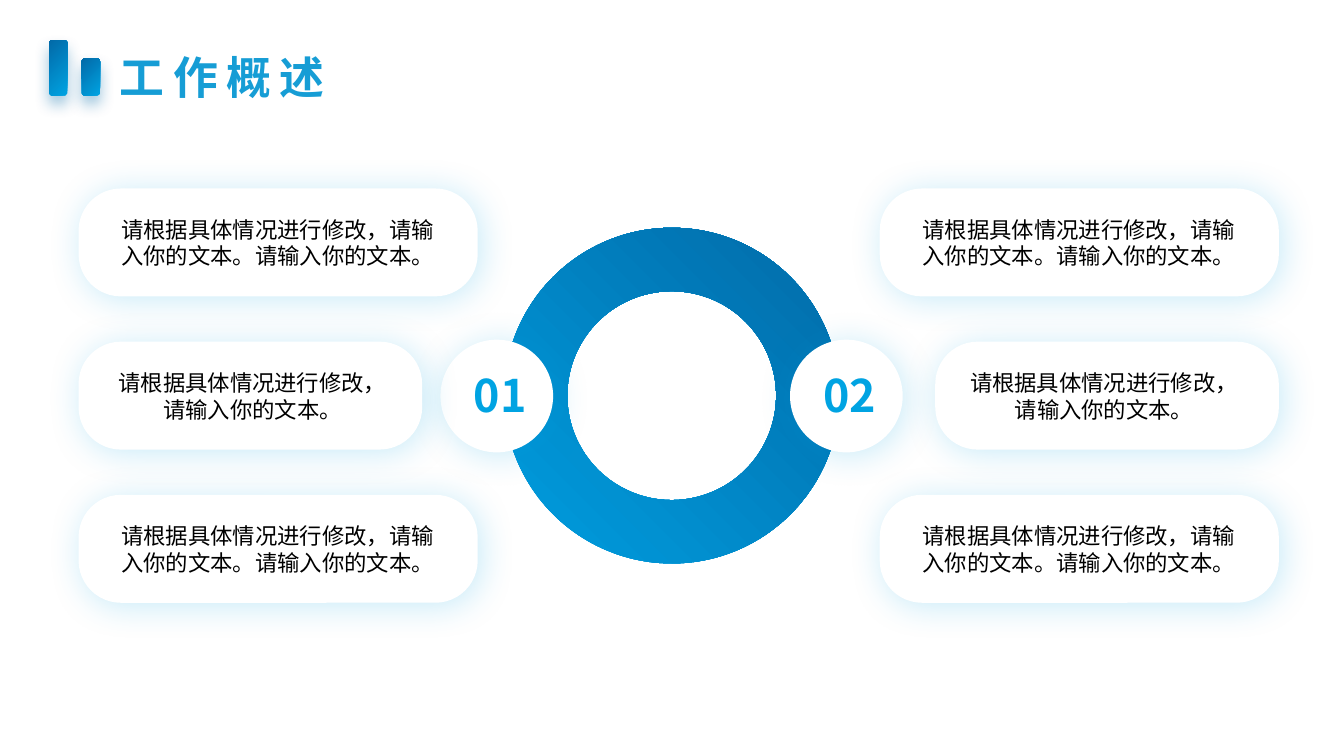
from lxml import etree
from pptx import Presentation
from pptx.dml.color import RGBColor
from pptx.enum.shapes import MSO_SHAPE
from pptx.enum.text import MSO_AUTO_SIZE, PP_ALIGN
from pptx.oxml.ns import qn
from pptx.util import Cm, Pt

DONUT = MSO_SHAPE.DONUT
OVAL = MSO_SHAPE.OVAL
ROUNDED = MSO_SHAPE.ROUNDED_RECTANGLE
FIT_SHAPE = MSO_AUTO_SIZE.SHAPE_TO_FIT_TEXT
LEFT, CENTER = PP_ALIGN.LEFT, PP_ALIGN.CENTER

FONT = "Noto Sans CJK SC"
BLUE, NAVY, WHITE = "00A3E2", "026AA8", "FFFFFF"
CARD_GLOW = (BLUE, 21, 26, 3, 45)
BAR_SHADOW = (NAVY, 40, 11, 6, 90)

SHORT_TEXT = "请根据具体情况进行修改，请输入你的文本。"
LONG_TEXT = SHORT_TEXT + "请输入你的文本。"
CARD_ROWS = [(LONG_TEXT, 10.06, 8.66), (SHORT_TEXT, 8.66, 7.39), (LONG_TEXT, 10.06, 8.66)]
CARD_TOP, CARD_PITCH, CARD_HEIGHT = 4.75, 3.86, 2.72


def rgb(color):
    return RGBColor.from_string(color)


def paint(fill, colors, angle=315):
    if len(colors) == 1:
        fill.solid()
        fill.fore_color.rgb = rgb(colors[0])
        return
    fill.gradient()
    fill.gradient_angle = angle
    for stop, color in zip(fill.gradient_stops, colors):
        stop.color.rgb = rgb(color)


def add_shadow(sp, color, alpha, blur, distance, angle):
    effects = sp._element.spPr.find(qn("a:effectLst"))
    shadow = etree.SubElement(
        effects, qn("a:outerShdw"), blurRad=str(Pt(blur)), dist=str(Pt(distance)),
        dir=str(angle * 60000), algn="ctr", rotWithShape="0")
    clr = etree.SubElement(shadow, qn("a:srgbClr"), val=color)
    etree.SubElement(clr, qn("a:alpha"), val=str(alpha * 1000))


def add_figure(s, kind, box, colors, angle=315, adj=None, shadow=None):
    sp = s.shapes.add_shape(kind, *map(Cm, box))
    sp.shadow.inherit = False
    sp.line.fill.background()
    paint(sp.fill, colors, angle)
    if adj is not None:
        sp.adjustments[0] = adj
    if shadow:
        add_shadow(sp, *shadow)
    return sp


def add_text(s, text, box, size, colors, bold=False, align=LEFT, wrap=False, spacing=0):
    tf = s.shapes.add_textbox(*map(Cm, box)).text_frame
    tf.word_wrap = wrap
    tf.auto_size = FIT_SHAPE
    p = tf.paragraphs[0]
    p.text = text
    p.alignment = align
    r = p.runs[0]
    r.font.size = Pt(size)
    r.font.bold = bold
    r.font.name = FONT
    paint(r.font.fill, colors)
    rPr = r._r.get_or_add_rPr()
    etree.SubElement(rPr, qn("a:ea"), typeface=FONT)
    if spacing:
        rPr.set("spc", str(spacing * 100))


def add_title(s):
    add_text(s, "工作概述", (2.77, 1.12, 5.89, 1.63), 32, ["169DD5"], bold=True, spacing=6)
    for left, height in ((1.24, 1.4), (2.06, 0.94)):
        bar = add_figure(s, ROUNDED, (left, 2.41 - height, 0.46, height),
                         [BLUE, NAVY], shadow=BAR_SHADOW)
        bar.rotation = 180


def add_number(s, number, left):
    add_figure(s, OVAL, (left, 8.56, 2.84, 2.84), [WHITE], shadow=CARD_GLOW)
    add_text(s, number, (left + 0.59, 9.14, 1.9, 1.63), 32, [BLUE, NAVY], bold=True)


def add_card(s, text, card_left, card_width, text_left, text_width, top):
    add_figure(s, ROUNDED, (card_left, top, card_width, CARD_HEIGHT), [WHITE],
               adj=0.392, shadow=CARD_GLOW)
    add_text(s, text, (text_left, top + 0.56, text_width, 1.63), 16, ["000000"],
             align=CENTER, wrap=True)


def main():
    prs = Presentation()
    prs.slide_width, prs.slide_height = Cm(33.87), Cm(19.05)
    s = prs.slides.add_slide(prs.slide_layouts[6])
    add_figure(s, DONUT, (12.7, 5.74, 8.46, 8.46), ["009EDF", NAVY], angle=45, adj=0.189)
    add_number(s, "01", 11.1)
    add_number(s, "02", 19.91)
    for row, (text, card_width, text_width) in enumerate(CARD_ROWS):
        top = CARD_TOP + row * CARD_PITCH
        add_card(s, text, 1.98, card_width, 2.67, text_width, top)
        add_card(s, text, 32.23 - card_width, card_width, 31.52 - text_width, text_width, top)
    add_title(s)
    prs.save("out.pptx")


if __name__ == "__main__":
    main()
